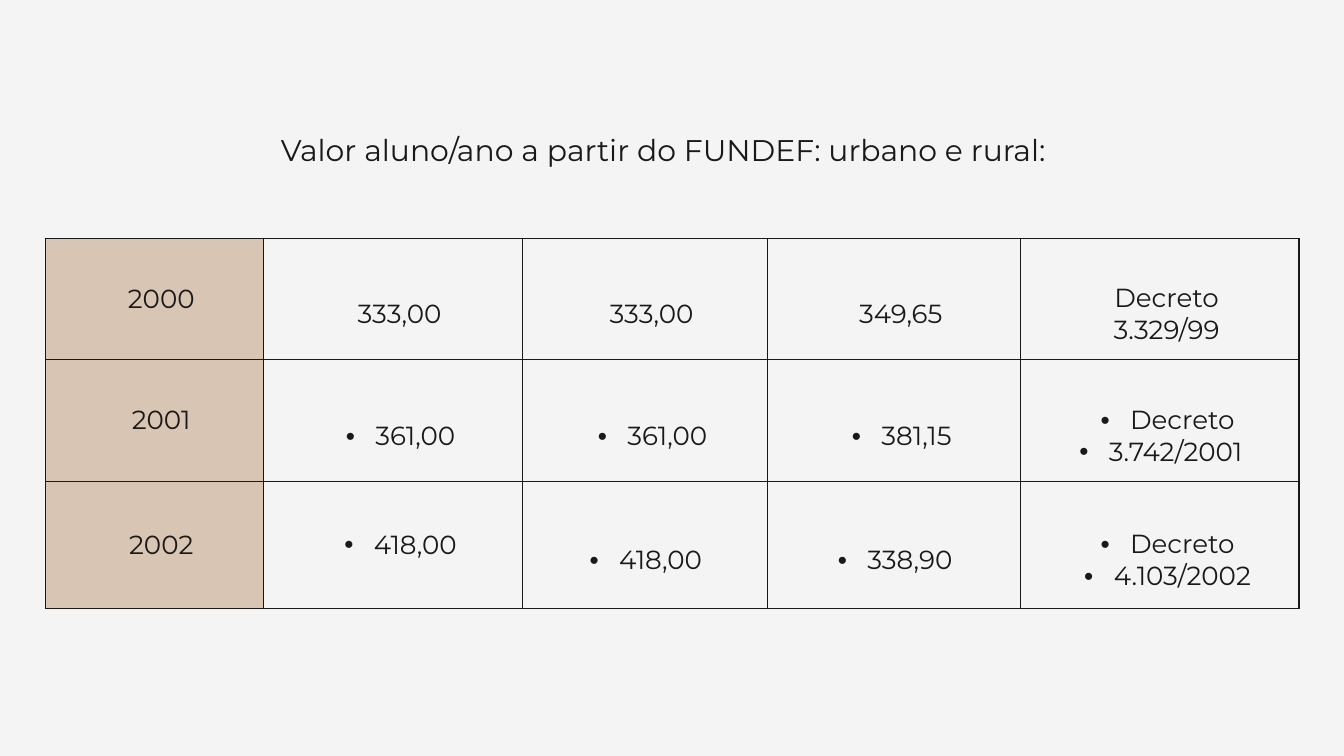
from lxml import etree
from pptx import Presentation
from pptx import util as u
from pptx.dml.color import RGBColor
from pptx.enum import text
from pptx.oxml.ns import qn

INK, PAPER, SAND = "191919", "F4F4F4", "D8C5B3"
WIDTH, HEIGHT = u.Inches(20), u.Inches(11.25)


def color(hex_code):
    return RGBColor.from_string(hex_code)


def add_run(paragraph, words, size):
    """Add a run in the slide's typeface and ink."""
    run = paragraph.add_run()
    run.text = words
    for name, value in {"name": "Montserrat", "size": u.Pt(size), "bold": False}.items():
        setattr(run.font, name, value)
    run.font.color.rgb = color(INK)


presentation = Presentation()
presentation.slide_width, presentation.slide_height = WIDTH, HEIGHT
slide = presentation.slides.add_slide(presentation.slide_layouts[6])
slide.background.fill.solid()
slide.background.fill.fore_color.rgb = color(PAPER)

# Table content: a cell holds one or two lines
rows = [
    ["2000", "333,00", "333,00", "349,65", "Decreto\n3.329/99"],
    ["2001", "361,00", "361,00", "381,15", "Decreto\n3.742/2001"],
    ["2002", "418,00", "418,00", "338,90", "Decreto\n4.103/2002"],
]
column_widths = [3.24, 3.85, 3.65, 3.77, 4.14]
row_heights = [1.81, 1.81, 1.89]
inset, line_height = 0.2, 0.46
plain_indent, bullet_indent, narrow_indent, hanging = 0.2, 0.67, 0.47, -0.44
narrow_lines = {(1, 4, 1), (2, 2, 0), (2, 3, 0)}  # row, column, line
centered_cells = {(0, 0), (1, 0), (2, 0), (2, 1)}  # the rest sit half a line lower

frame = slide.shapes.add_table(
    len(rows), len(column_widths), int(WIDTH * 0.034), int(HEIGHT * 0.315),
    u.Inches(sum(column_widths)), u.Inches(sum(row_heights)))
table = frame.table
table.first_row = table.horz_banding = False
for column, width in zip(table.columns, column_widths):
    column.width = u.Inches(width)
for row, height in zip(table.rows, row_heights):
    row.height = u.Inches(height)

for r, values in enumerate(rows):
    for c, value in enumerate(values):
        cell = table.cell(r, c)
        lowered = 0 if (r, c) in centered_cells else line_height
        cell_format = {
            "margin_left": u.Inches(inset), "margin_right": u.Inches(inset),
            "margin_top": u.Inches(inset + lowered), "margin_bottom": u.Inches(inset),
            "vertical_anchor": text.MSO_ANCHOR.MIDDLE,
        }
        for name, setting in cell_format.items():
            setattr(cell, name, setting)

        properties = cell._tc.get_or_add_tcPr()
        for side in ("a:lnL", "a:lnR", "a:lnT", "a:lnB"):
            border = etree.SubElement(properties, qn(side), w=str(u.Pt(1.5)))
            fill = etree.SubElement(border, qn("a:solidFill"))
            etree.SubElement(fill, qn("a:srgbClr"), val=INK)
        cell.fill.solid()
        cell.fill.fore_color.rgb = color(PAPER if c else SAND)

        for n, line in enumerate(value.split("\n")):
            paragraph = cell.text_frame.add_paragraph() if n else cell.text_frame.paragraphs[0]
            paragraph.alignment = text.PP_ALIGN.CENTER
            add_run(paragraph, line, 28)
            bulleted = r > 0 and c > 0
            indent = plain_indent
            paragraph_properties = paragraph._p.get_or_add_pPr()
            if bulleted:
                indent = narrow_indent if (r, c, n) in narrow_lines else bullet_indent
                paragraph_properties.set("indent", str(u.Inches(hanging)))
                etree.SubElement(paragraph_properties, qn("a:buFont"), typeface="Arial")
                etree.SubElement(paragraph_properties, qn("a:buChar"), char="•")
            paragraph_properties.set("marL", str(u.Inches(indent)))

title = slide.shapes.add_textbox(
    int(WIDTH * 0.209), int(HEIGHT * 0.174), int(WIDTH * 0.582), int(HEIGHT * 0.094))
title_format = {
    "margin_left": 0, "margin_right": 0, "margin_top": 0, "margin_bottom": 0,
    "word_wrap": True,
}
for name, setting in title_format.items():
    setattr(title.text_frame, name, setting)
paragraph = title.text_frame.paragraphs[0]
paragraph.line_spacing = u.Pt(38.4)
add_run(paragraph, "Valor aluno/ano a partir do FUNDEF: urbano e rural:", 32)

presentation.save("out.pptx")
